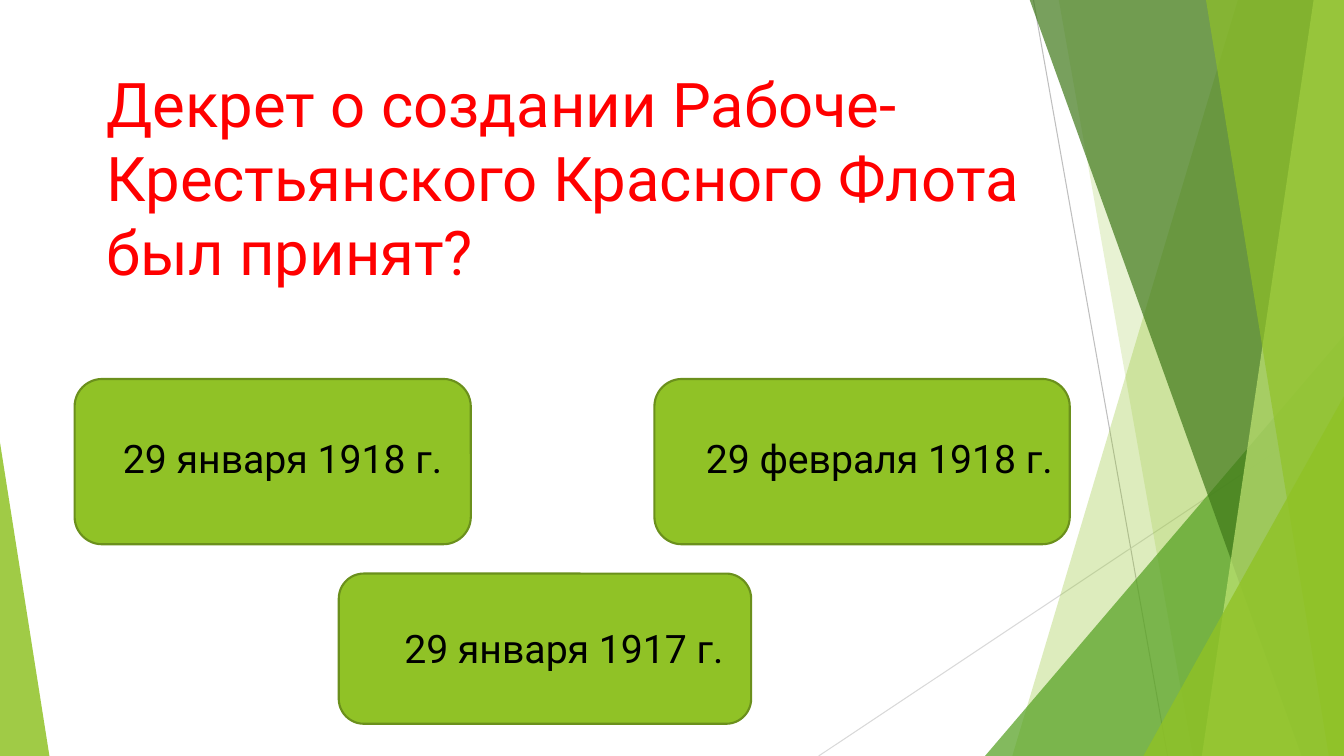
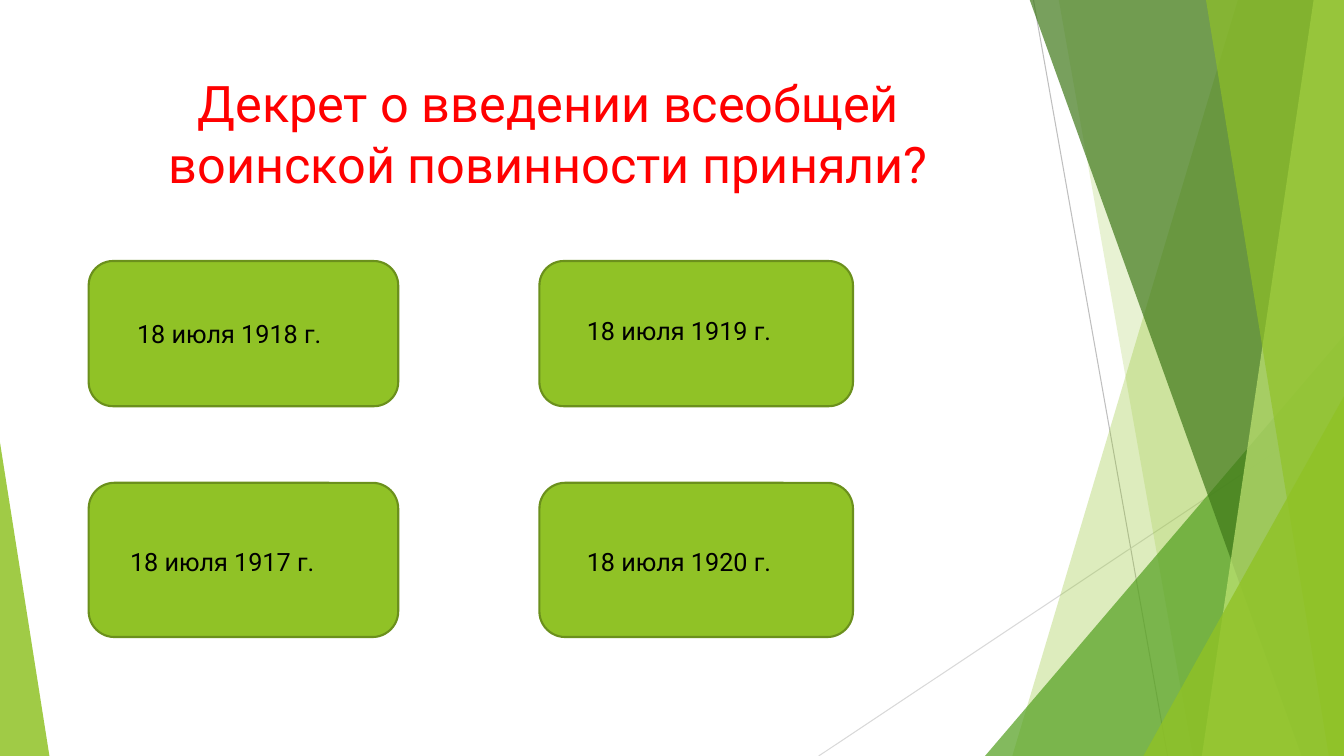
from dataclasses import dataclass
from math import sqrt

from lxml import etree
from pptx import Presentation
from pptx.dml.color import RGBColor
from pptx.enum.shapes import MSO_CONNECTOR, MSO_SHAPE
from pptx.enum.text import MSO_ANCHOR, PP_ALIGN
from pptx.oxml.ns import qn
from pptx.util import Inches, Pt

LEFT, CENTER = PP_ALIGN.LEFT, PP_ALIGN.CENTER
TOP = MSO_ANCHOR.TOP
TRIANGLE, ROUND_RECT = MSO_SHAPE.ISOSCELES_TRIANGLE, MSO_SHAPE.ROUNDED_RECTANGLE
STRAIGHT = MSO_CONNECTOR.STRAIGHT

WIDTH, HEIGHT = 13.33, 7.5
BLEED = -0.01
CORNER = 1 / 6


@dataclass(frozen=True)
class Theme:
    font: str = "Roboto"
    title: str = "FF0000"
    text: str = "000000"
    green: str = "90C226"
    card_line: str = "6B901C"
    leaf: str = "54A021"
    forest: str = "3F7819"
    lime: str = "C0E474"
    ray_dark: str = "BFBFBF"
    ray_light: str = "D9D9D9"
    title_large: int = 44
    title_small: int = 36
    answer_large: int = 28
    answer_small: int = 18
    card_line_width: float = 1.5
    ray_width: float = 0.75


T = Theme()


def rgb(color):
    return RGBColor.from_string(color)


def write(shape, text, *, size, color=T.text, align=LEFT, margins=(0.1, 0.05, 0.1, 0.05)):
    """Set the text of a shape; margins are left, top, right, bottom in inches."""
    tf = shape.text_frame
    tf.word_wrap = True
    tf.vertical_anchor = TOP
    tf.margin_left, tf.margin_top, tf.margin_right, tf.margin_bottom = map(Inches, margins)
    p = tf.paragraphs[0]
    p.alignment = align
    r = p.add_run()
    r.text = text
    r.font.name = T.font
    r.font.size = Pt(size)
    r.font.color.rgb = rgb(color)


def paint_glass(shape, color, opacity):
    """Fill a shape with a see-through colour and no outline; opacity in percent."""
    shape.shadow.inherit = False
    shape.fill.solid()
    shape.fill.fore_color.rgb = rgb(color)
    clr = shape.element.spPr.find(".//" + qn("a:srgbClr"))
    etree.SubElement(clr, qn("a:alpha")).set("val", str(opacity * 1000))
    shape.line.fill.background()


def add_ray(shapes, start, end, color):
    ray = shapes.add_connector(STRAIGHT, *map(Inches, start + end))
    ray.line.color.rgb = rgb(color)
    ray.line.width = Pt(T.ray_width)
    etree.SubElement(ray.element.spPr, qn("a:effectLst"))


def add_band(shapes, top_x, bottom_x, color, opacity):
    """Add a full-height band from a slanted left edge to the right slide edge."""
    builder = shapes.build_freeform(Inches(top_x), Inches(BLEED))
    corners = [(WIDTH, BLEED), (WIDTH, HEIGHT), (bottom_x, HEIGHT)]
    builder.add_line_segments([(Inches(x), Inches(y)) for x, y in corners], close=True)
    paint_glass(builder.convert_to_shape(), color, opacity)


def add_wedge(shapes, left, top, right, apex, color, opacity):
    """Add a triangle standing on the bottom edge; apex 0 is left, 1 is right."""
    wedge = shapes.add_shape(TRIANGLE, Inches(left), Inches(top),
                             Inches(right - left), Inches(HEIGHT - top))
    wedge.adjustments[0] = apex
    paint_glass(wedge, color, opacity)


def add_backdrop(s):
    shapes = s.shapes.add_group_shape().shapes
    add_ray(shapes, (10.25, 0), (11.58, HEIGHT), T.ray_dark)
    add_ray(shapes, (WIDTH, 4.03), (8.12, HEIGHT), T.ray_light)
    add_band(shapes, 12.28, 10.04, T.green, 30)
    add_band(shapes, 10.5, 11.83, T.green, 20)
    add_wedge(shapes, 9.77, 3.33, WIDTH, 1, T.leaf, 72)
    add_band(shapes, 10.21, 12.91, T.forest, 70)
    add_band(shapes, 13.03, 11.92, T.lime, 70)
    add_band(shapes, 11.96, 13.18, T.green, 65)
    add_wedge(shapes, 11.34, 3.93, WIDTH, 1, T.green, 80)
    add_wedge(shapes, 0, 4.39, 0.49, 0, T.green, 85)


def add_title(s, box, text, **text_format):
    title = s.shapes.add_textbox(*map(Inches, box))
    write(title, text, color=T.title, **text_format)


def add_answer(s, box, text, text_at, size):
    """Add an answer card whose text starts at text_at (x, y on the slide)."""
    left, top, width, height = box
    card = s.shapes.add_shape(ROUND_RECT, *map(Inches, box))
    card.adjustments[0] = CORNER
    card.shadow.inherit = False
    card.fill.solid()
    card.fill.fore_color.rgb = rgb(T.green)
    card.line.color.rgb = rgb(T.card_line)
    card.line.width = Pt(T.card_line_width)
    # A rounded rectangle already insets its text area by part of the corner radius
    inset = (1 - sqrt(0.5)) * CORNER * min(width, height)
    x, y = text_at
    write(card, text, size=size, margins=(x - left - inset, y - top - inset, 0, 0))


def add_question(prs, title_box, title, title_format, answers, answer_size):
    s = prs.slides.add_slide(prs.slide_layouts[6])
    add_backdrop(s)
    add_title(s, title_box, title, **title_format)
    for box, text, text_at in answers:
        add_answer(s, box, text, text_at, answer_size)


def main():
    prs = Presentation()
    prs.slide_width, prs.slide_height = Inches(WIDTH), Inches(HEIGHT)

    add_question(
        prs, (0.96, 0.61, 10.24, 1.44),
        "Декрет о создании Рабоче-Крестьянского Красного Флота был принят?",
        {"size": T.title_large},
        [((0.74, 3.76, 3.93, 1.64), "29 января 1918 г.", (1.22, 4.31)),
         ((6.49, 3.76, 4.12, 1.64), "29 февраля 1918 г.", (7.0, 4.31)),
         ((3.36, 5.69, 4.09, 1.49), "29 января 1917 г.", (4.01, 6.19))],
        T.answer_large)

    (left, left_w), (right, right_w) = (0.88, 3.07), (5.35, 3.11)
    (upper, upper_h), (lower, lower_h) = (2.59, 1.44), (4.79, 1.53)
    add_question(
        prs, (0.74, 0.67, 9.4, 1.44),
        "Декрет о введении всеобщей воинской повинности приняли?",
        {"size": T.title_small, "align": CENTER},
        [((left, upper, left_w, upper_h), "18 июля 1918 г.", (1.36, 3.16)),
         ((right, upper, right_w, upper_h), "18 июля 1919 г.", (5.82, 3.13)),
         ((left, lower, left_w, lower_h), "18 июля 1917 г.", (1.29, 5.42)),
         ((right, lower, right_w, lower_h), "18 июля 1920 г.", (5.82, 5.42))],
        T.answer_small)

    prs.save("out.pptx")


if __name__ == "__main__":
    main()
